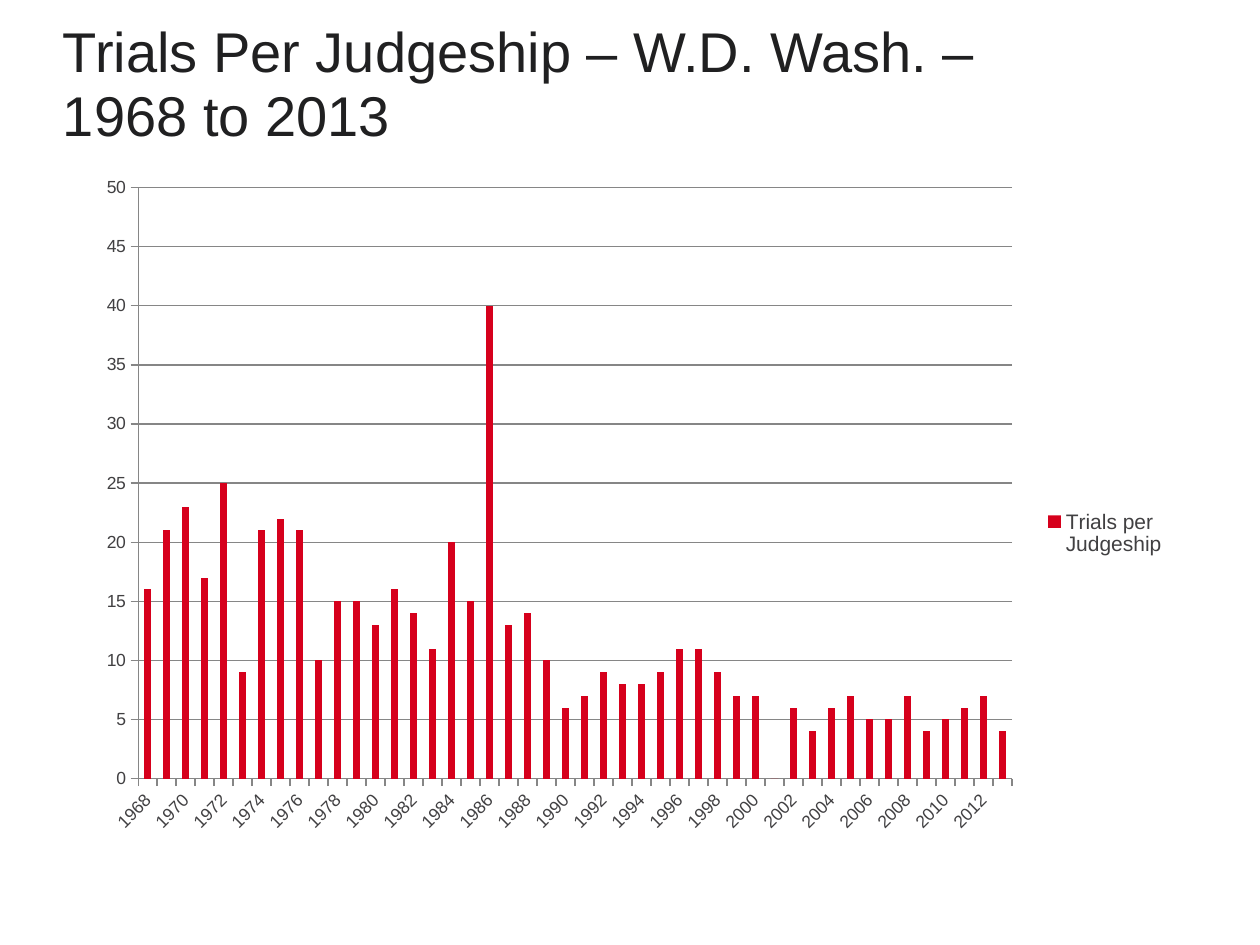
from lxml.etree import SubElement
from pptx import Presentation
from pptx.chart.data import CategoryChartData
from pptx.dml.color import RGBColor
from pptx.enum.chart import XL_CHART_TYPE, XL_LEGEND_POSITION, XL_TICK_MARK
from pptx.enum.text import MSO_ANCHOR
from pptx.oxml import parse_xml
from pptx.oxml.ns import nsdecls, qn
from pptx.util import Inches, Pt

FONT = "Arial"
FIRST_YEAR = 1968
TRIALS = [16, 21, 23, 17, 25, 9, 21, 22, 21, 10, 15, 15,
          13, 16, 14, 11, 20, 15, 40, 13, 14, 10, 6, 7,
          9, 8, 8, 9, 11, 11, 9, 7, 7, 0, 6, 4,
          6, 7, 5, 5, 7, 4, 5, 6, 7, 4]


def rgb(value):
    return RGBColor.from_string(value)


def style_font(font, size, color):
    font.name = FONT
    font.size = Pt(size)
    font.color.rgb = rgb(color)


def manual_layout(x, y, w, h, inner=False):
    """Return a chart layout element given as shares of the chart's size."""
    layout = parse_xml(f"<c:layout {nsdecls('c')}><c:manualLayout/></c:layout>")
    settings = [("layoutTarget", "inner")] if inner else []
    settings += [("xMode", "edge"), ("yMode", "edge"),
                 ("x", x), ("y", y), ("w", w), ("h", h)]
    for tag, value in settings:
        SubElement(layout[0], qn(f"c:{tag}")).set("val", str(value))
    return layout


def add_title(s, text, left, top, width, height):
    tf = s.shapes.add_textbox(left, top, width, height).text_frame
    tf.margin_left = tf.margin_right = tf.margin_top = tf.margin_bottom = 0
    tf.word_wrap = True
    tf.vertical_anchor = MSO_ANCHOR.MIDDLE
    p = tf.paragraphs[0]
    p.text = text
    p.line_spacing = 0.95
    for r in p.runs:
        style_font(r.font, 32, "202021")


def style_axes(chart):
    for axis in (chart.category_axis, chart.value_axis):
        axis.major_tick_mark = XL_TICK_MARK.OUTSIDE
        axis.minor_tick_mark = XL_TICK_MARK.NONE
        axis.format.line.color.rgb = rgb("868686")
        style_font(axis.tick_labels.font, 10, "414042")
    labels = chart.category_axis._element.find(qn("c:txPr"))
    labels.find(qn("a:bodyPr")).set("rot", str(-45 * 60000))
    values = chart.value_axis
    values.minimum_scale, values.maximum_scale, values.major_unit = 0, 50, 5
    values.has_major_gridlines = True
    values.major_gridlines.format.line.color.rgb = rgb("868686")
    values.tick_labels.number_format = "0"
    values.tick_labels.number_format_is_linked = False


def add_trials_chart(s, left, top, width, height):
    data = CategoryChartData(number_format="0")
    data.categories = [str(FIRST_YEAR + i) for i in range(len(TRIALS))]
    data.add_series("Trials per Judgeship", TRIALS)
    chart = s.shapes.add_chart(XL_CHART_TYPE.COLUMN_STACKED,
                               left, top, width, height, data).chart
    chart.has_title = False
    style_font(chart.font, 10, "414042")
    style_axes(chart)

    plot = chart.plots[0]
    plot.gap_width, plot.overlap = 150, 100
    plot.vary_by_categories = False
    fill = plot.series[0].format.fill
    fill.solid()
    fill.fore_color.rgb = rgb("D6001C")

    area = chart._chartSpace.chart.plotArea
    for old in area.findall(qn("c:layout")):
        area.remove(old)
    area.insert(0, manual_layout(0.04, 0.03, 0.8, 0.88, inner=True))

    chart.has_legend = True
    legend = chart.legend
    legend.position = XL_LEGEND_POSITION.RIGHT
    legend.include_in_layout = False
    style_font(legend.font, 12, "414042")
    for old in legend._element.findall(qn("c:layout")):
        legend._element.remove(old)
    legend._element.find(qn("c:legendPos")).addnext(
        manual_layout(0.85, 0.5, 0.15, 0.09))


def main():
    prs = Presentation()
    prs.slide_width, prs.slide_height = Inches(10), Inches(7.5)
    s = prs.slides.add_slide(prs.slide_layouts[6])
    add_title(s, "Trials Per Judgeship – W.D. Wash. – \v1968 to 2013",
              Inches(0.5), Inches(0.42), Inches(8.96), Inches(0.51))
    add_trials_chart(s, Inches(0.75), Inches(1.33), Inches(8.67), Inches(5.33))
    prs.save("out.pptx")


if __name__ == "__main__":
    main()
